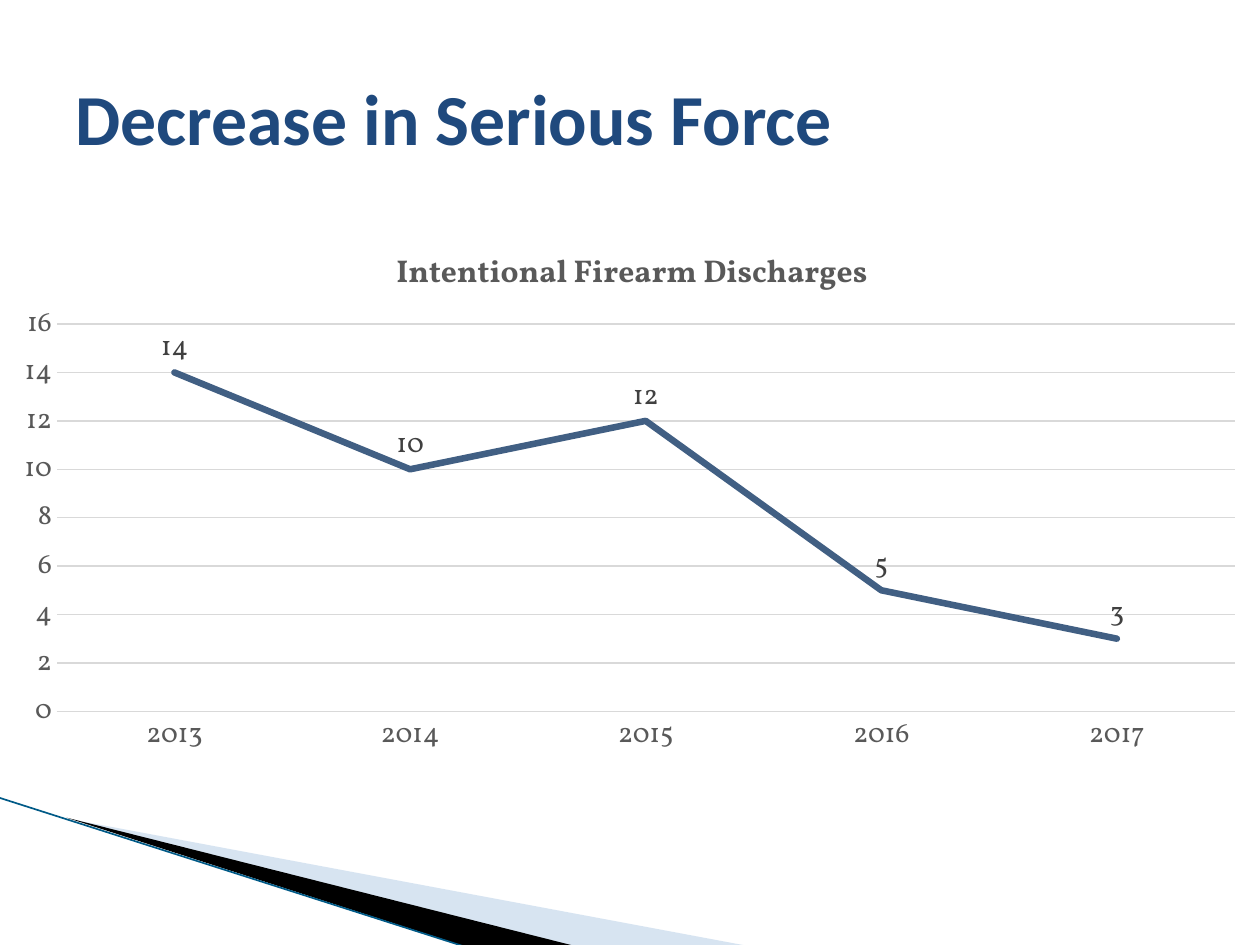
from dataclasses import dataclass

from lxml.etree import SubElement
from pptx import Presentation
from pptx.chart.data import CategoryChartData
from pptx.dml.color import RGBColor
from pptx.enum.chart import XL_CHART_TYPE as ChartType
from pptx.enum.chart import XL_LABEL_POSITION as LabelPosition
from pptx.enum.chart import XL_TICK_MARK as TickMark
from pptx.enum.shapes import MSO_CONNECTOR as ConnectorType
from pptx.enum.text import MSO_ANCHOR as Anchor
from pptx.oxml import parse_xml
from pptx.oxml.ns import nsdecls, qn
from pptx.util import Inches, Pt


@dataclass(frozen=True)
class Theme:
    heading_font: str = "Calibri"
    chart_font: str = "Vollkorn"
    heading: str = "1F497D"
    series: str = "415F83"
    axis_text: str = "595959"
    label_text: str = "404040"
    grid: str = "D9D9D9"
    edge: str = "005A87"
    heading_size: float = 41
    chart_title_size: float = 18
    chart_text_size: float = 16


@dataclass(frozen=True)
class Wedge:
    points: tuple[tuple[float, float], ...]
    color: str
    opacity: int = 100


THEME = Theme()
WEDGES = (
    Wedge(((0.55, 6.5), (5.95, 7.51), (4.56, 7.51)), "9DBDDE", 40),
    Wedge(((0.53, 6.49), (4.57, 7.51), (3.72, 7.52)), "000000"),
)
DISCHARGES = {"2013": 14, "2014": 10, "2015": 12, "2016": 5, "2017": 3}


def style_font(font, name: str, size: float, color: str, bold: bool = False) -> None:
    for attribute, value in {"name": name, "size": Pt(size), "bold": bold}.items():
        setattr(font, attribute, value)
    font.color.rgb = RGBColor.from_string(color)


def style_line(line, color: str, width: float) -> None:
    line.color.rgb = RGBColor.from_string(color)
    line.width = Pt(width)


def draw_wedge(slide, wedge: Wedge) -> None:
    start, *rest = [(Inches(x), Inches(y)) for x, y in wedge.points]
    builder = slide.shapes.build_freeform(*start)
    builder.add_line_segments(rest, close=True)
    shape = builder.convert_to_shape()
    shape.shadow.inherit = False
    shape.fill.solid()
    shape.fill.fore_color.rgb = RGBColor.from_string(wedge.color)
    shape.line.fill.background()
    if wedge.opacity < 100:
        color = shape.fill._xPr.find(".//" + qn("a:srgbClr"))
        SubElement(color, qn("a:alpha"), val=str(wedge.opacity * 1000))


def draw_edge(slide) -> None:
    edge = slide.shapes.add_connector(
        ConnectorType.STRAIGHT, Inches(-0.01), Inches(6.33), Inches(3.71), Inches(7.52))
    style_line(edge.line, THEME.edge, 0.95)
    SubElement(edge._element.spPr, qn("a:effectLst"))


def draw_heading(slide, text: str) -> None:
    box = slide.shapes.add_textbox(Inches(0.5), Inches(0.3), Inches(9), Inches(1.25))
    frame = box.text_frame
    frame.word_wrap = True
    frame.vertical_anchor = Anchor.MIDDLE
    run = frame.paragraphs[0].add_run()
    run.text = text
    style_font(run.font, THEME.heading_font, THEME.heading_size, THEME.heading, True)


def manual_layout(inner: bool = False, **fractions: float):
    """Return a layout placed by fractions of the chart's size."""
    target = '<c:layoutTarget val="inner"/>' if inner else ""
    modes = "".join(f'<c:{key}Mode val="edge"/>' for key in ("x", "y"))
    values = "".join(f'<c:{key} val="{value}"/>' for key, value in fractions.items())
    return parse_xml(f'<c:layout {nsdecls("c")}><c:manualLayout>{target}{modes}{values}'
                     "</c:manualLayout></c:layout>")


def set_layout(parent, layout, index: int) -> None:
    for old in parent.findall(qn("c:layout")):
        parent.remove(old)
    parent.insert(index, layout)


def style_axes(chart) -> None:
    for axis in (chart.category_axis, chart.value_axis):
        axis.major_tick_mark = axis.minor_tick_mark = TickMark.NONE
        style_font(axis.tick_labels.font, THEME.chart_font,
                   THEME.chart_text_size, THEME.axis_text)
    style_line(chart.category_axis.format.line, THEME.grid, 0.75)
    value_axis = chart.value_axis
    scale = {"minimum_scale": 0, "maximum_scale": 16, "major_unit": 2}
    for attribute, value in scale.items():
        setattr(value_axis, attribute, value)
    value_axis.format.line.fill.background()
    style_line(value_axis.major_gridlines.format.line, THEME.grid, 0.75)


def style_series(series) -> None:
    series.smooth = False
    style_line(series.format.line, THEME.series, 3.75)
    series.format.line._ln.set("cap", "rnd")
    labels = series.data_labels
    labels.show_value = True
    labels.position = LabelPosition.ABOVE
    style_font(labels.font, THEME.chart_font, THEME.chart_text_size, THEME.label_text)


def draw_chart(slide, title: str, values: dict[str, int]) -> None:
    data = CategoryChartData()
    data.categories = list(values)
    data.add_series("Series 1", list(values.values()))
    chart = slide.shapes.add_chart(
        ChartType.LINE, Inches(0), Inches(1.75), Inches(10), Inches(4.33), data).chart
    chart.has_legend = False
    style_font(chart.font, THEME.chart_font, THEME.chart_text_size, THEME.axis_text)
    frame = chart.chart_title.text_frame
    frame.text = title
    style_font(frame.paragraphs[0].runs[0].font, THEME.chart_font,
               THEME.chart_title_size, THEME.axis_text, True)
    set_layout(chart.chart_title._element, manual_layout(x=0.31, y=0.04), 1)
    plot = chart.plots[0]
    plot.vary_by_categories = False
    set_layout(plot._element.getparent(),
               manual_layout(True, x=0.045, y=0.19, w=0.935, h=0.71), 0)
    style_axes(chart)
    style_series(plot.series[0])


def main() -> None:
    presentation = Presentation()
    presentation.slide_width, presentation.slide_height = Inches(10), Inches(7.5)
    slide = presentation.slides.add_slide(presentation.slide_layouts[6])
    for wedge in WEDGES:
        draw_wedge(slide, wedge)
    draw_edge(slide)
    draw_heading(slide, "Decrease in Serious Force")
    draw_chart(slide, "Intentional Firearm Discharges", DISCHARGES)
    presentation.save("out.pptx")


if __name__ == "__main__":
    main()
